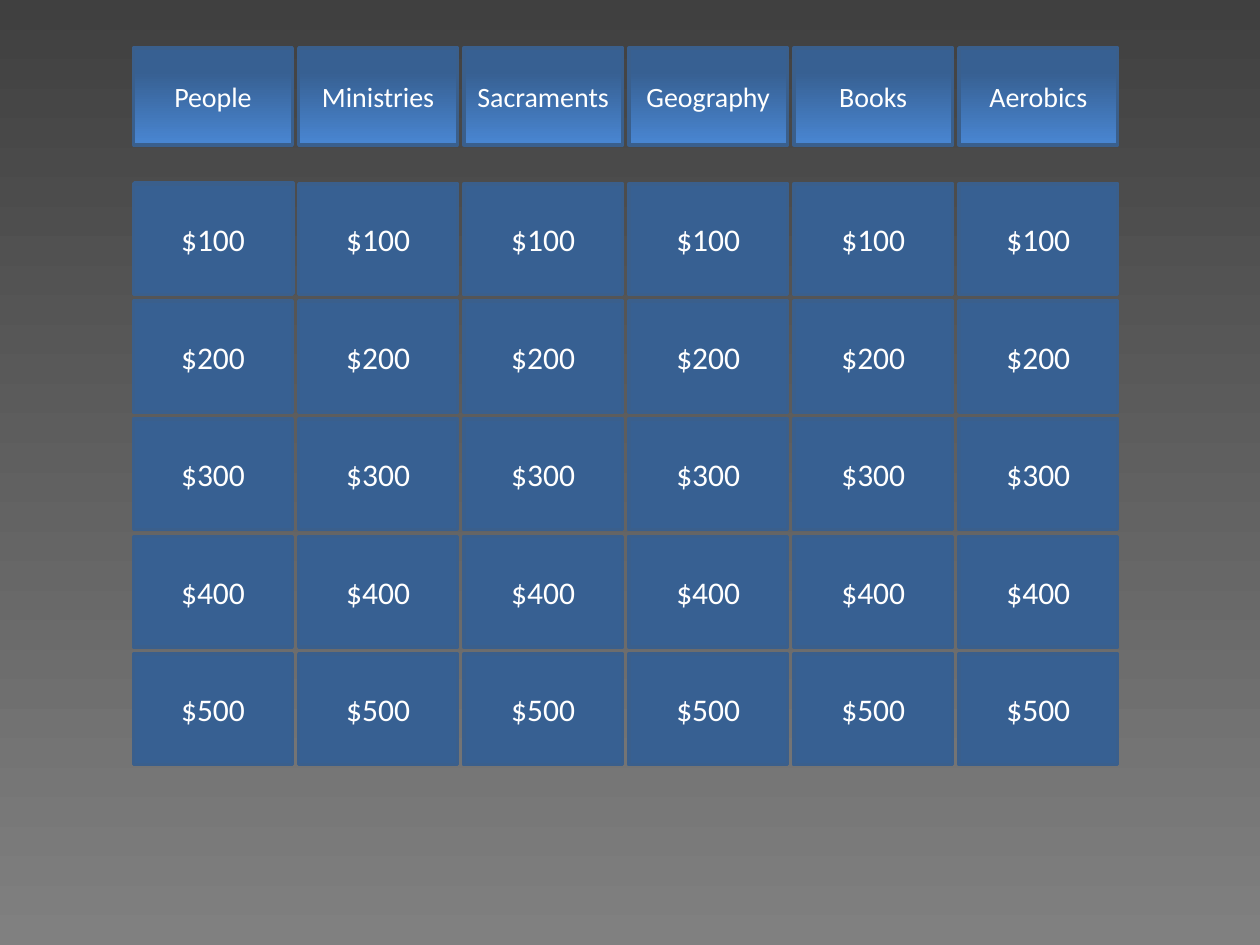
import copy
from dataclasses import dataclass

import pptx
import pptx.dml.color
import pptx.enum.shapes
import pptx.enum.text
import pptx.util

Pt = pptx.util.Pt


@dataclass(frozen=True)
class Theme:
    font: str = "Calibri"
    text: str = "FFFFFF"
    tile: str = "376092"
    edge: str = "3A5F8C"
    edge_width: float = 2
    header_size: float = 16
    value_size: float = 18
    header_stops: tuple = ((0, "376092"), (0.25, "376092"), (1, "4986D2"))
    page_stops: tuple = ((0, "404040"), (1, "808080"))


THEME = Theme()
CATEGORIES = ["People", "Ministries", "Sacraments", "Geography", "Books", "Aerobics"]
VALUES = ["$100", "$200", "$300", "$400", "$500"]
GAP_X, GAP_Y = 3.6, 3.8


def rgb(value):
    return pptx.dml.color.RGBColor.from_string(value)


def paint_gradient(fill, element, stops):
    """Fill from top to bottom with (position, colour) stops."""
    fill.gradient()
    fill.gradient_angle = 270
    stop_list = element.xpath(".//a:gsLst")[0]
    while len(stop_list) < len(stops):
        stop_list.append(copy.deepcopy(stop_list[-1]))
    for stop, (position, colour) in zip(fill.gradient_stops, stops):
        stop.position = position
        stop.color.rgb = rgb(colour)


def write_text(shape, text, *, size, colour=THEME.text, font=THEME.font):
    frame = shape.text_frame
    frame.word_wrap = True
    frame.margin_left = frame.margin_right = Pt(3.6)
    frame.vertical_anchor = pptx.enum.text.MSO_ANCHOR.MIDDLE
    para = frame.paragraphs[0]
    para.alignment = pptx.enum.text.PP_ALIGN.CENTER
    span = para.add_run()
    span.text = text
    span.font.size = Pt(size)
    span.font.name = font
    span.font.color.rgb = rgb(colour)


def add_tile(page, box, stops=None):
    tile = page.shapes.add_shape(
        pptx.enum.shapes.MSO_SHAPE.RECTANGLE, *(Pt(length) for length in box))
    tile.shadow.inherit = False
    if stops:
        paint_gradient(tile.fill, tile._element, stops)
    else:
        tile.fill.solid()
        tile.fill.fore_color.rgb = rgb(THEME.tile)
    tile.line.color.rgb = rgb(THEME.edge)
    tile.line.width = Pt(THEME.edge_width)
    return tile


def split(start, length, count, gap):
    """Return the starts and the common size of equal parts."""
    size = (length - gap * (count - 1)) / count
    return [start + index * (size + gap) for index in range(count)], size


def add_headers(page, box):
    left, top, width, height = box
    lefts, tile_width = split(left, width, len(CATEGORIES), GAP_X)
    for tile_left, category in zip(lefts, CATEGORIES):
        tile = add_tile(page, (tile_left, top, tile_width, height), THEME.header_stops)
        write_text(tile, category, size=THEME.header_size)


def add_values(page, box):
    left, top, width, height = box
    lefts, tile_width = split(left, width, len(CATEGORIES), GAP_X)
    tops, tile_height = split(top, height, len(VALUES), GAP_Y)
    # Plain tile just above and right of the first value
    add_tile(page, (left + 0.6, top - 0.6, tile_width, tile_height))
    for tile_left in lefts:
        for tile_top, value in zip(tops, VALUES):
            tile = add_tile(page, (tile_left, tile_top, tile_width, tile_height))
            write_text(tile, value, size=THEME.value_size)


def main():
    deck = pptx.Presentation()
    deck.slide_width, deck.slide_height = Pt(720), Pt(540)
    page = deck.slides.add_slide(deck.slide_layouts[6])
    paint_gradient(page.background.fill, page._element, THEME.page_stops)
    # Category row, then the grid of amounts
    add_headers(page, (76.4, 27.4, 562.3, 55.4))
    add_values(page, (76.4, 105, 562.3, 332))
    deck.save("out.pptx")


if __name__ == "__main__":
    main()
